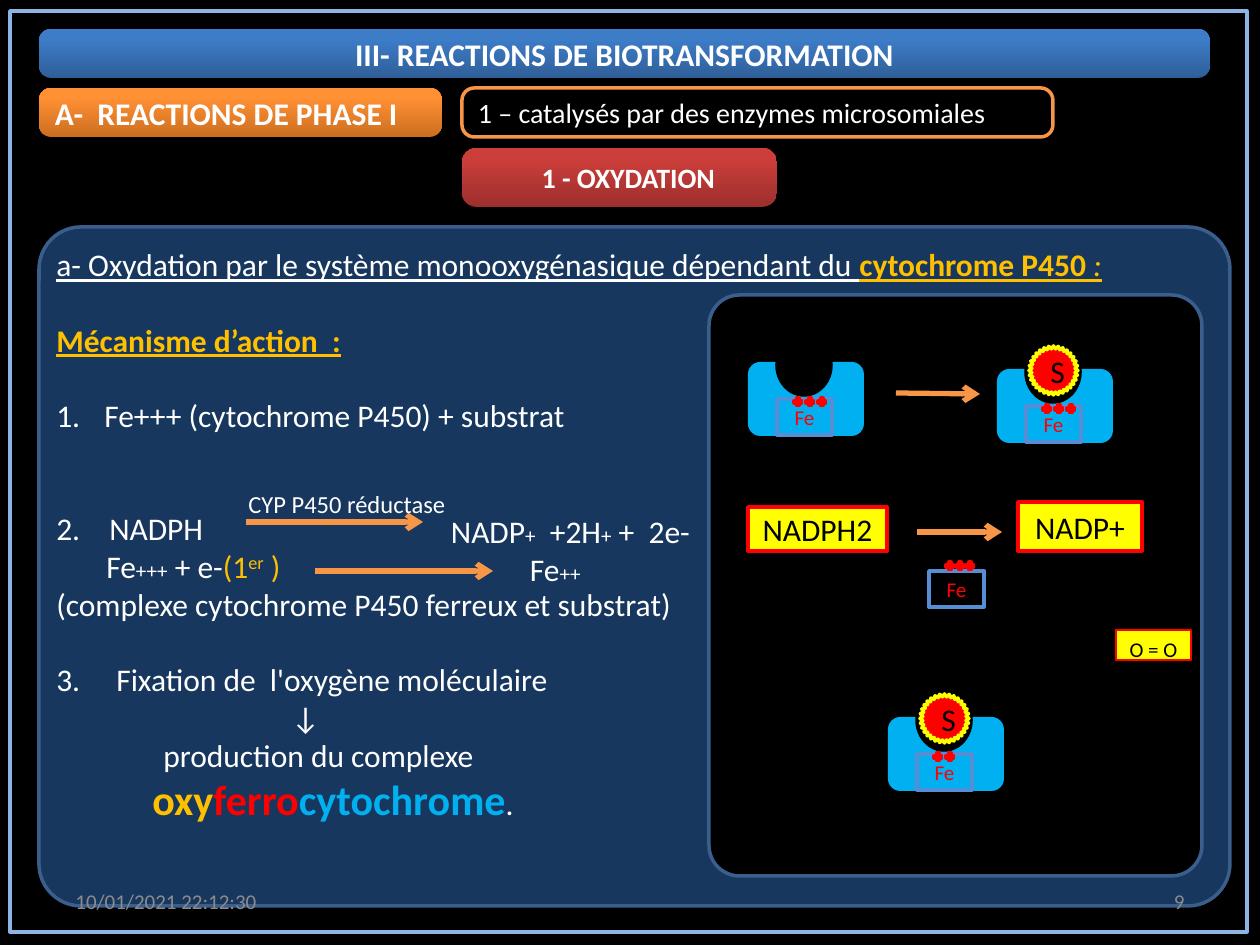
from lxml import etree
from pptx import Presentation
from pptx.dml.color import RGBColor
from pptx.enum.shapes import MSO_CONNECTOR, MSO_SHAPE
from pptx.enum.text import MSO_ANCHOR, PP_ALIGN
from pptx.oxml.ns import qn
from pptx.util import Pt

RECT, ROUND = MSO_SHAPE.RECTANGLE, MSO_SHAPE.ROUNDED_RECTANGLE
OVAL, PLUS, STAR = MSO_SHAPE.OVAL, MSO_SHAPE.MATH_PLUS, MSO_SHAPE.STAR_32_POINT
LEFT, MID, RIGHT = PP_ALIGN.LEFT, PP_ALIGN.CENTER, PP_ALIGN.RIGHT
TOP, CENTRE = MSO_ANCHOR.TOP, MSO_ANCHOR.MIDDLE
STRAIGHT = MSO_CONNECTOR.STRAIGHT

BLACK, WHITE = RGBColor(0, 0, 0), RGBColor(255, 255, 255)
RED, YELLOW = RGBColor(255, 0, 0), RGBColor(255, 255, 0)
GOLD, CYAN = RGBColor(0xFF, 0xC0, 0), RGBColor(0, 0xB0, 0xF0)
ORANGE, GREY = RGBColor(0xF7, 0x96, 0x46), RGBColor(0x8C, 0x8C, 0x8C)
NAVY, EDGE = RGBColor(0x17, 0x37, 0x5E), RGBColor(0x3A, 0x5F, 0x8C)
FRAME, STEEL = RGBColor(0x8E, 0xB4, 0xE3), RGBColor(0x55, 0x8E, 0xD5)
BLUES = RGBColor(0x2F, 0x5F, 0x99), RGBColor(0x3D, 0x7C, 0xC7)
AMBERS = RGBColor(0xCC, 0x6E, 0x20), RGBColor(0xFF, 0x90, 0x34)
REDS = RGBColor(0x9C, 0x2F, 0x2D), RGBColor(0xCB, 0x3E, 0x3A)

SCALE = 914400 / 126
FONT = "Calibri"
LINE = 21.5  # height in points of one line of body text

TITLE = "III- REACTIONS DE BIOTRANSFORMATION"
BAR = (39, 29, 1171, 49)
# text, place, fill, line, size, bold, left margin
HEADS = [
    ("A-  REACTIONS DE PHASE I", (39, 88, 403, 49), AMBERS, None, 18, True, 0),
    ("1 – catalysés par des enzymes microsomiales", (462, 88, 591, 49), BLACK, ORANGE, 16, False, 0),
    ("1 - OXYDATION", (462, 148, 315, 59), REDS, None, 16, True, 63),
]

SMALL, AMBER = {"size": 12}, {"color": GOLD}
KEY = {"color": GOLD, "bold": True, "underline": True}
BIG = {"size": 24, "bold": True}
# lines of space before, left margin, number (0 for none), runs
BODY = [
    (0, 0, 0, [
        ("a- Oxydation par le système monooxygénasique dépendant du ", {"underline": True}),
        ("cytochrome P450", KEY),
        (" :", {"color": GOLD, "underline": True, "italic": True})]),
    (1, 0, 0, [("Mécanisme d’action  :", KEY)]),
    (1, 48, 1, [("Fe+++ (cytochrome P450) + substrat", {})]),
    (2, 53, 2, [("NADPH", {})]),
    (0, 50, 0, [
        ("Fe", {}), ("+++", SMALL), (" + e-", {}), ("(1", AMBER),
        ("er", {"color": GOLD, "raised": True}), (" )", AMBER)]),
    (0, 0, 0, [("(complexe cytochrome P450 ferreux et substrat)", {})]),
    (1, 60, 3, [("Fixation de  l'oxygène moléculaire", {})]),
    (0, 235, 0, [("↓", {})]),
    (0, 107, 0, [("production du complexe", {})]),
    (0, 96, 0, [
        ("oxy", {"color": GOLD, **BIG}), ("ferro", {"color": RED, **BIG}),
        ("cytochrome", {"color": CYAN, **BIG}), (".", {})]),
]
# what stands to the right of each reaction arrow: place, runs
YIELDS = [
    ((451, 512, 252, 38), [
        ("NADP", {}), ("+", SMALL), ("  +2H", {}), ("+", SMALL), (" +  2e-", {})]),
    ((530, 550, 126, 38), [("Fe", {}), ("++", SMALL)]),
]
STEPS = [(246, 522, 423, 522), (315, 571, 493, 571)]
MOVES = [(896, 393, 980, 394), (917, 532, 1002, 532)]
# left, top, number of charges, substrate bound
CELLS = [(748, 362, 3, False), (997, 369, 3, True), (888, 717, 2, True)]
TAGS = [("NADPH2", (748, 507, 139, 44)), ("NADP+", (1018, 502, 124, 49))]
# text, place, size, colour, alignment, anchor
NOTES = [
    ("CYP P450 réductase", (236, 483, 295, 43), 14, WHITE, LEFT, TOP),
    ("10/01/2021 22:12:30", (63, 876, 294, 50), 12, GREY, LEFT, CENTRE),
    ("9", (903, 876, 294, 50), 12, GREY, RIGHT, CENTRE),
]


def px(num):
    return round(num * SCALE)


def style(run, color=WHITE, size=18, bold=False, italic=False, underline=False, raised=False):
    font = run.font
    font.name, font.size, font.color.rgb = FONT, Pt(size), color
    font.bold, font.italic, font.underline = bold, italic, underline
    if raised:
        font._element.set("baseline", "30000")


def paint(shape, fill, line, width=2):
    """Fill with one colour, a (bottom, top) pair or nothing, and set the outline."""
    if fill is None:
        shape.fill.background()
    elif isinstance(fill, RGBColor):
        shape.fill.solid()
        shape.fill.fore_color.rgb = fill
    else:
        shape.fill.gradient()
        shape.fill.gradient_angle = 90
        for stop, color, pos in zip(shape.fill.gradient_stops, fill, (0, 0.8)):
            stop.color.rgb, stop.position = color, pos
    if line is None:
        shape.line.fill.background()
    else:
        shape.line.color.rgb, shape.line.width = line, Pt(width)


def add(kind, place, fill=None, line=None, width=2, adj=None):
    shape = slide.shapes.add_shape(kind, *map(px, place))
    shape.shadow.inherit = False
    paint(shape, fill, line, width)
    if adj is not None:
        shape.adjustments[0] = adj
    return shape


def write(shape, text, align=MID, anchor=CENTRE, **look):
    frame = shape.text_frame
    frame.word_wrap, frame.vertical_anchor = True, anchor
    frame.text = text
    para = frame.paragraphs[0]
    para.alignment = align
    style(para.runs[0], **look)
    return para


def spell(para, runs):
    """Add styled runs to a left-aligned paragraph."""
    para.alignment = LEFT
    for text, look in runs:
        run = para.add_run()
        run.text = text
        style(run, **look)


def arrow(x1, y1, x2, y2):
    link = slide.shapes.add_connector(STRAIGHT, *map(px, (x1, y1, x2, y2)))
    link.line.color.rgb, link.line.width = ORANGE, Pt(3)
    etree.SubElement(link.line._get_or_add_ln(), qn("a:tailEnd"), type="arrow")
    etree.SubElement(link._element.spPr, qn("a:effectLst"))


def iron(x, y, count, gap, rise):
    """Fe box with a row of positive charges at its top edge."""
    write(add(RECT, (x, y, 55, 36), line=STEEL), "Fe", color=RED, size=12)
    for i in range(count):
        add(PLUS, (x + 16 + i * gap, y - rise, 10, 10), RED, RED)


def cell(x, y, count, bound):
    """Cytochrome with its pocket, its iron and, if bound, the substrate."""
    add(ROUND, (x, y, 116, 74), CYAN)
    add(OVAL, (x + 29, y - 27, 54, 60), BLACK, BLACK)
    iron(x + 29, y + 37, count, 12, 2)
    if bound:
        star = add(STAR, (x + 32, y - 23, 49, 49), RED, YELLOW, adj=0.443)
        write(star, "S", color=BLACK)


def body(frame):
    frame.word_wrap, frame.vertical_anchor = True, TOP
    frame.margin_left = px(5)
    for i, (blank, left, num, runs) in enumerate(BODY):
        para = frame.add_paragraph() if i else frame.paragraphs[0]
        para.space_before = Pt(blank * LINE)
        props = para._p.get_or_add_pPr()
        props.set("marL", str(px(left)))
        props.set("indent", str(px(-left) if num else 0))
        if num:
            etree.SubElement(props, qn("a:buAutoNum"), type="arabicPeriod", startAt=str(num))
        spell(para, runs)


deck = Presentation()
deck.slide_width, deck.slide_height = px(1260), px(945)
slide = deck.slides.add_slide(deck.slide_layouts[5])
slide.background.fill.solid()
slide.background.fill.fore_color.rgb = BLACK

title = slide.shapes.title
bar = add(ROUND, BAR, BLUES, adj=0.249)
title._element.addprevious(bar._element)
title.left, title.top, title.width, title.height = map(px, BAR)
write(title, TITLE, bold=True)

add(RECT, (10, 11, 1237, 921), line=FRAME)
for text, place, fill, line, size, bold, left in HEADS:
    para = write(add(ROUND, place, fill, line, adj=0.249), text, LEFT, size=size, bold=bold)
    para._p.get_or_add_pPr().set("marL", str(px(left)))

body(add(ROUND, (39, 227, 1191, 679), NAVY, EDGE, adj=0.062).text_frame)
for place, runs in YIELDS:
    frame = slide.shapes.add_textbox(*map(px, place)).text_frame
    frame.word_wrap = True
    frame.margin_left = frame.margin_right = frame.margin_top = frame.margin_bottom = 0
    spell(frame.paragraphs[0], runs)
add(ROUND, (709, 295, 493, 581), BLACK, EDGE, adj=0.062)
for ends in STEPS + MOVES:
    arrow(*ends)
for spot in CELLS:
    cell(*spot)
for text, place in TAGS:
    write(add(RECT, place, YELLOW, RED), text, color=BLACK)
iron(929, 571, 3, 10, 10)
write(add(RECT, (1116, 630, 75, 30), YELLOW, RED, 0.75), "O = O", anchor=TOP, color=BLACK, size=12)
for text, place, size, color, align, anchor in NOTES:
    write(slide.shapes.add_textbox(*map(px, place)), text, align, anchor, color=color, size=size)

deck.save("out.pptx")
